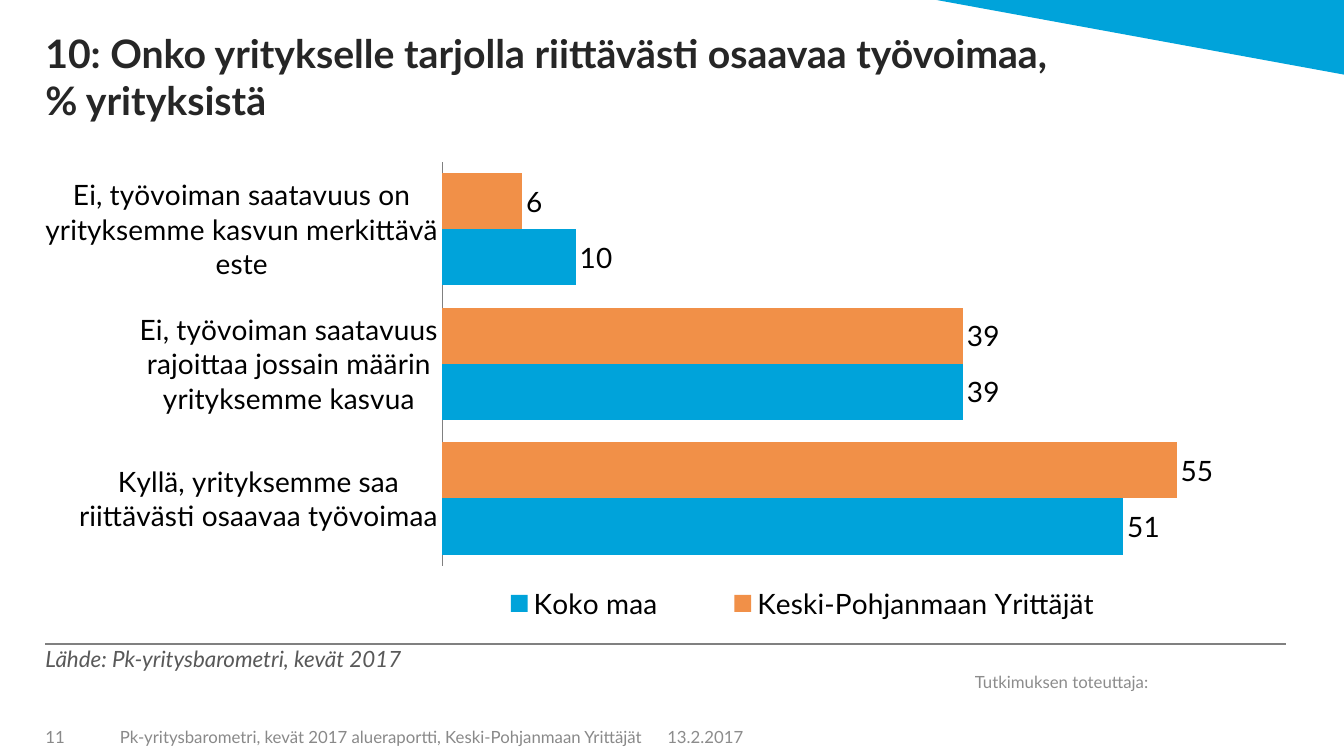
from lxml import etree
from pptx import Presentation
from pptx import util as u
from pptx.chart.data import CategoryChartData
from pptx.dml.color import RGBColor
from pptx.enum import chart as ch, shapes, text as tx
from pptx.oxml import ns

HUES = {"blue": "00A3DA", "orange": "F19048", "title": "262626",
        "source": "595959", "foot": "898989", "mark": "8C8C8C",
        "rule": "808080", "text": "000000"}
FACE = "Lato"
LEFT, WIDE = 0.45, 12.3

CATS = ["Ei, työvoiman saatavuus on yrityksemme kasvun merkittävä este",
        "Ei, työvoiman saatavuus rajoittaa jossain määrin yrityksemme kasvua",
        "Kyllä, yrityksemme saa riittävästi osaavaa työvoimaa"]
ROWS = [("Keski-Pohjanmaan Yrittäjät", (6, 39, 55), "orange"),
        ("Koko maa", (10, 39, 51), "blue")]


def hue(name):
    return RGBColor.from_string(HUES[name])


def inch(box):
    return [u.Inches(n) for n in box]


def write(slide, box, words, size=12, color="foot", bold=False, italic=False,
          anchor=tx.MSO_ANCHOR.MIDDLE, pad=(0.1, 0.05, 0.1, 0.05)):
    frame = slide.shapes.add_textbox(*inch(box)).text_frame
    frame.word_wrap = True
    frame.vertical_anchor = anchor
    (frame.margin_left, frame.margin_top,
     frame.margin_right, frame.margin_bottom) = inch(pad)
    para = frame.paragraphs[0]
    para.text = words
    for run in para.runs:
        font = run.font
        font.name, font.size = FACE, u.Pt(size)
        font.bold, font.italic = bold, italic
        font.color.rgb = hue(color)


def place(x, y, w, h, inner=False):
    """Manual chart layout, in fractions of the chart area."""
    layout = etree.Element(ns.qn("c:layout"))
    manual = etree.SubElement(layout, ns.qn("c:manualLayout"))
    parts = [("layoutTarget", "inner")] if inner else []
    parts += [("xMode", "edge"), ("yMode", "edge"),
              ("x", x), ("y", y), ("w", w), ("h", h)]
    for tag, val in parts:
        etree.SubElement(manual, ns.qn("c:" + tag)).set("val", str(val))
    return layout


def head(slide, box):
    x, y, w, h = box
    # Corner wedge
    wedge = slide.shapes.add_shape(shapes.MSO_SHAPE.RIGHT_TRIANGLE,
                                   *inch((x + w - 4.04, y, 4.04, 0.74)))
    wedge.rotation = 180
    wedge.shadow.inherit = False
    wedge.fill.solid()
    wedge.fill.fore_color.rgb = hue("blue")
    wedge.line.fill.background()
    # Title
    write(slide, (LEFT, y, WIDE, h),
          "10: Onko yritykselle tarjolla riittävästi osaavaa työvoimaa, \v% yrityksistä",
          size=28, color="title", bold=True,
          anchor=tx.MSO_ANCHOR.BOTTOM, pad=(0, 0, 0, 0))


def bars(slide, box):
    data = CategoryChartData(number_format="0")
    data.categories = CATS
    for name, vals, _ in ROWS:
        data.add_series(name, vals)
    chart = slide.shapes.add_chart(ch.XL_CHART_TYPE.BAR_CLUSTERED,
                                   *inch(box), data).chart
    chart.has_title = False
    chart.font.name, chart.font.size = FACE, u.Pt(20)
    chart.font.color.rgb = hue("text")

    # Axes
    cat, val = chart.category_axis, chart.value_axis
    cat.reverse_order = True
    cat.major_tick_mark = cat.minor_tick_mark = ch.XL_TICK_MARK.NONE
    cat.format.line.color.rgb = hue("rule")
    val.minimum_scale, val.maximum_scale = 0, 60
    val.has_major_gridlines = False
    val.visible = False

    # Bars and their labels
    plot = chart.plots[0]
    plot.gap_width, plot.overlap = 40, 0
    plot.vary_by_categories = False
    for row, (_, _, color) in zip(plot.series, ROWS):
        row.format.fill.solid()
        row.format.fill.fore_color.rgb = hue(color)
        tags = row.data_labels
        tags.show_value = True
        tags.position = ch.XL_LABEL_POSITION.OUTSIDE_END
        tags.number_format, tags.number_format_is_linked = "#,##0", False

    # Plot area and legend positions
    chart.has_legend = True
    chart.legend.position = ch.XL_LEGEND_POSITION.RIGHT
    chart.legend.include_in_layout = False
    root = chart.element if hasattr(chart, "element") else chart._chartSpace
    area = root.find(".//" + ns.qn("c:plotArea"))
    for old in area.findall(ns.qn("c:layout")):
        area.remove(old)
    area.insert(0, place(0.319, 0.012, 0.647, 0.849, inner=True))
    key = root.find(".//" + ns.qn("c:legend"))
    for old in key.findall(ns.qn("c:layout")):
        key.remove(old)
    key.find(ns.qn("c:legendPos")).addnext(place(0.32, 0.89, 0.58, 0.1))


def foot(slide, box):
    x, y, w, h = box
    # Rule
    rule = slide.shapes.add_connector(shapes.MSO_CONNECTOR.STRAIGHT,
                                      *inch((x, y, x + w, y)))
    rule.line.color.rgb = hue("rule")
    rule.line.width = u.Pt(1.5)
    etree.SubElement(rule.element.spPr, ns.qn("a:effectLst"))
    # Source and survey maker
    write(slide, (x, y + 0.01, 10.62, 0.43),
          "Lähde: Pk-yritysbarometri, kevät 2017", size=16, color="source",
          italic=True, anchor=tx.MSO_ANCHOR.TOP, pad=(0, 0, 0, 0))
    write(slide, (x + 9.12, y + 0.17, 2.18, 0.41), "Tutkimuksen toteuttaja:",
          color="mark")
    # Page number, report name and date
    low = y + h - 0.35
    write(slide, (x, low, 0.63, 0.35), "11", pad=(0, 0.05, 0.1, 0.05))
    write(slide, (x + 0.64, low, 5.41, 0.35),
          "Pk-yritysbarometri, kevät 2017 alueraportti, Keski-Pohjanmaan Yrittäjät")
    write(slide, (x + 6.07, low, 1.33, 0.35), "13.2.2017", color="mark")


def main():
    deck = Presentation()
    deck.slide_width, deck.slide_height = inch((13.33, 7.5))
    slide = deck.slides.add_slide(deck.slide_layouts[6])
    head(slide, (0, 0, 13.33, 1.22))
    bars(slide, (LEFT, 1.55, WIDE, 4.72))
    foot(slide, (LEFT, 6.39, WIDE, 1.09))
    deck.save("out.pptx")


if __name__ == "__main__":
    main()
